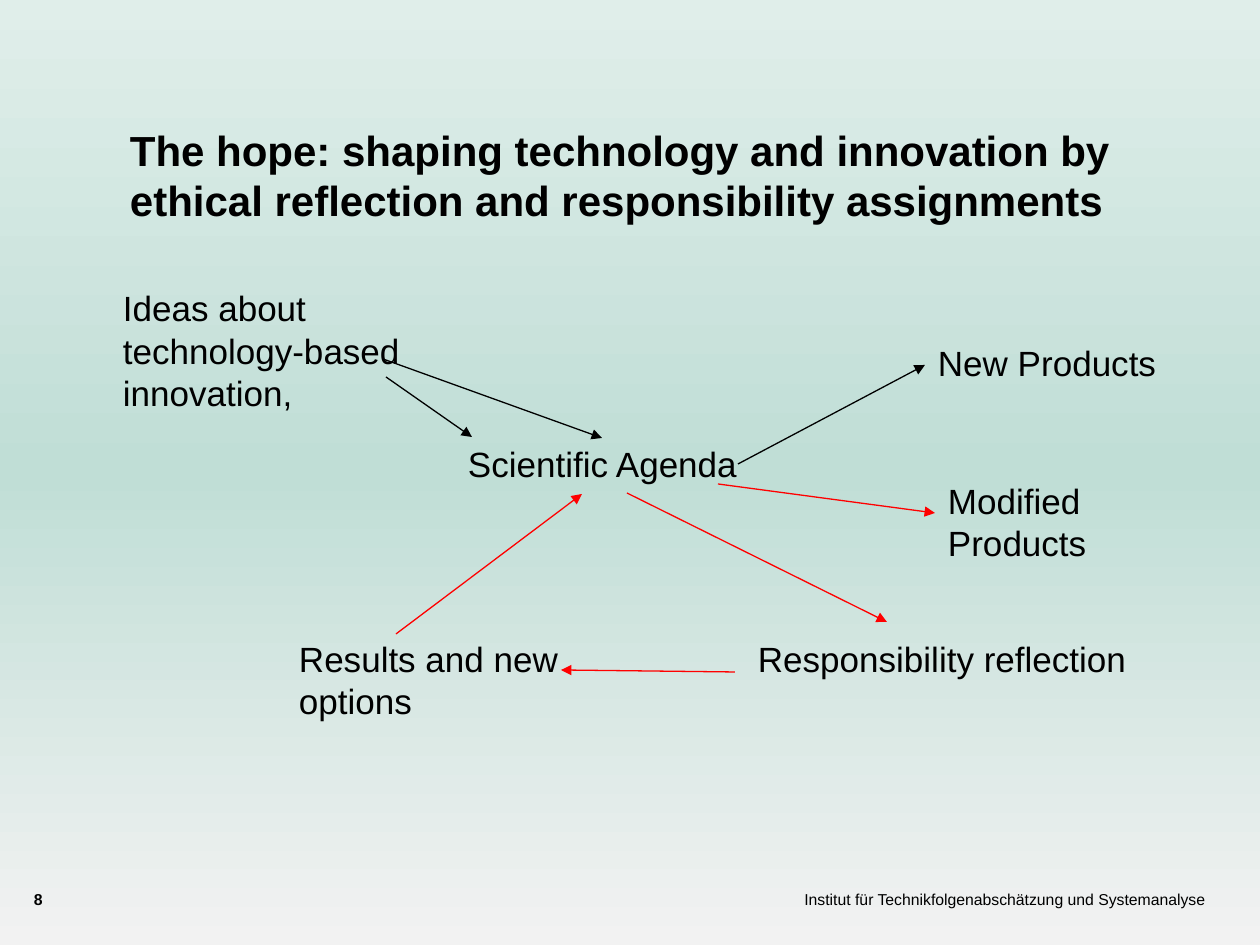
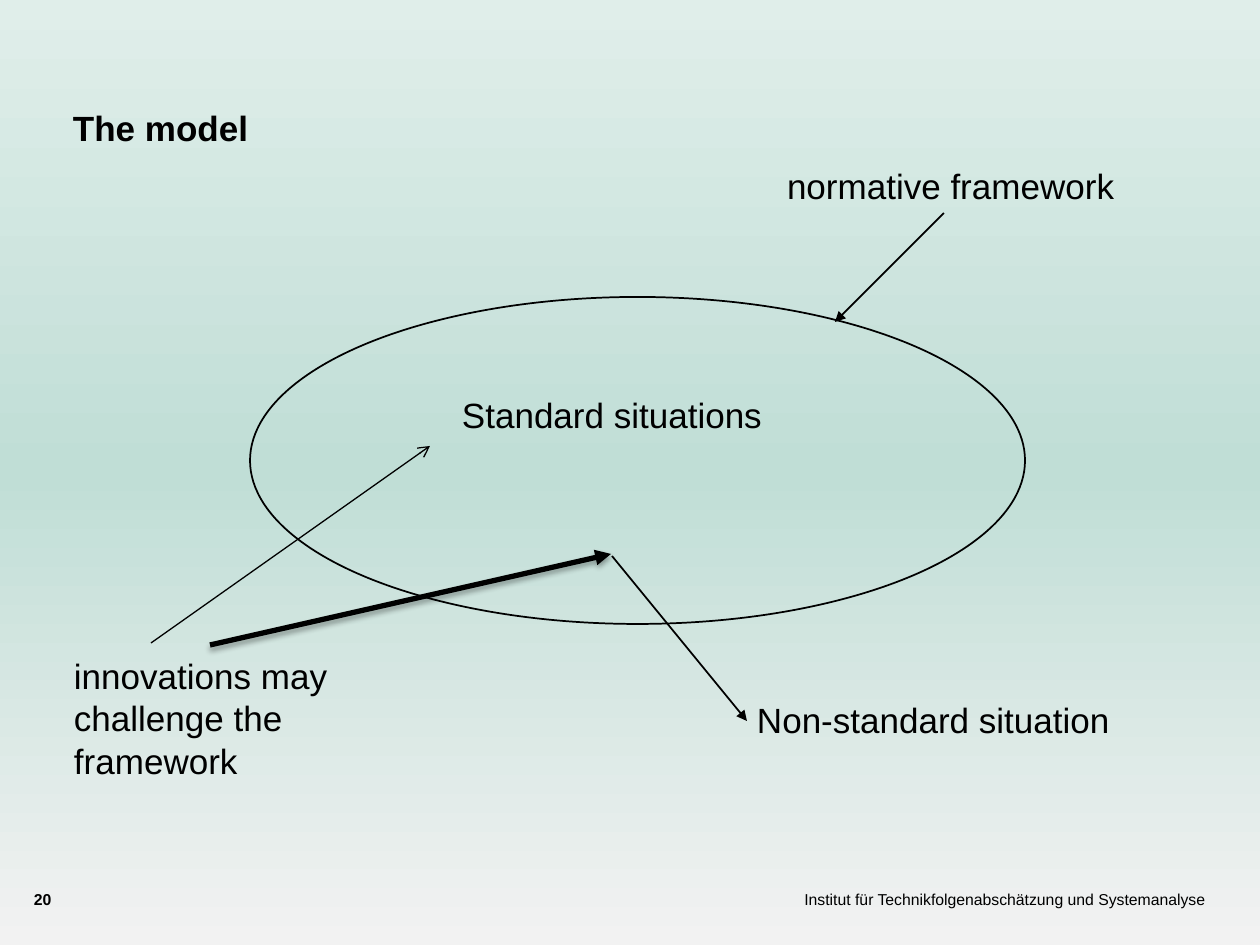
from typing import NamedTuple

from lxml import etree
from pptx import Presentation
from pptx import util as u
from pptx.dml.color import RGBColor
from pptx.enum import shapes, text
from pptx.oxml.ns import qn

PX = u.Inches(1) / 126
FONT = "Arial"
COLORS = {
    "ink": "000000",
    "feedback": "FF0000",
    "bottom": "F2F2F2",
    "middle": "C0DED6",
    "top": "E0EEEA",
}
BACKGROUND_STOPS = ((0, "bottom"), (50, "middle"), (100, "top"))
INSTITUTE = "Institut für Technikfolgenabschätzung und Systemanalyse"
WIDE_INSET = (13, 6)
NARROW_INSET = (10, 5)


class Box(NamedTuple):
    x: int
    y: int
    w: int
    h: int


class Label(NamedTuple):
    text: str
    box: Box


class Title(NamedTuple):
    text: str
    box: Box
    size: int
    indent: int = 0


class Arrow(NamedTuple):
    start: tuple[int, int]
    end: tuple[int, int]
    color: str = "ink"
    width: float = 0.75
    head: str = "triangle"
    shadow: bool = False


class Page(NamedTuple):
    number: int
    title: Title
    inset: tuple[int, int]
    labels: list[Label]
    arrows: list[Arrow]
    ellipse: Box | None = None


PAGES = [
    Page(
        8,
        Title(
            "The hope: shaping technology and innovation by ethical reflection "
            "and responsibility assignments",
            Box(69, 118, 1081, 583), 24, 48,
        ),
        WIDE_INSET,
        [
            Label("Ideas about technology-based innovation,", Box(110, 281, 393, 140)),
            Label("Scientific Agenda", Box(455, 436, 368, 54)),
            Label("Responsibility reflection", Box(745, 631, 454, 55)),
            Label("Results and new options", Box(286, 631, 296, 97)),
            Label("New Products", Box(925, 335, 300, 54)),
            Label("Modified Products", Box(935, 473, 286, 97)),
        ],
        [
            Arrow((386, 377), (472, 437)),
            Arrow((383, 359), (602, 438)),
            Arrow((738, 464), (925, 365)),
            Arrow((735, 672), (561, 670), "feedback"),
            Arrow((627, 493), (887, 622), "feedback"),
            Arrow((396, 634), (582, 494), "feedback"),
            Arrow((718, 484), (935, 513), "feedback"),
        ],
    ),
    Page(
        20,
        Title("The model", Box(63, 101, 1134, 786), 20),
        NARROW_INSET,
        [
            Label("Standard situations", Box(452, 388, 428, 53)),
            Label("innovations may challenge the framework", Box(64, 650, 355, 137)),
            Label("normative framework", Box(777, 160, 408, 53)),
            Label("Non-standard situation", Box(747, 694, 440, 53)),
        ],
        [
            Arrow((944, 213), (835, 322), width=1),
            Arrow((210, 645), (611, 554), width=3, shadow=True),
            Arrow((612, 556), (747, 721), width=1),
            Arrow((151, 643), (430, 446), head="arrow"),
        ],
        Box(250, 297, 775, 327),
    ),
]


def emu(*lengths: int) -> list[int]:
    return [round(n * PX) for n in lengths]


def rgb(name: str) -> RGBColor:
    return RGBColor.from_string(COLORS[name])


def add_color(parent, name: str):
    return etree.SubElement(parent, qn("a:srgbClr"), val=COLORS[name])


def set_background(master) -> None:
    master.background.fill.gradient()
    grad = master._element.find(".//" + qn("a:gradFill"))
    stops = grad.find(qn("a:gsLst"))
    for gs in list(stops):
        stops.remove(gs)
    for pos, name in BACKGROUND_STOPS:
        add_color(etree.SubElement(stops, qn("a:gs"), pos=str(pos * 1000)), name)
    grad.find(qn("a:lin")).set("ang", str(270 * 60000))


def add_text(s, content: str, box: Box, *, size: int = 20, bold: bool = False,
             inset: tuple[int, int] = (0, 0), indent: int = 0,
             align=text.PP_ALIGN.LEFT) -> None:
    tf = s.shapes.add_textbox(*emu(*box)).text_frame
    tf.word_wrap = True
    tf.margin_left = tf.margin_right = emu(inset[0])[0]
    tf.margin_top = tf.margin_bottom = emu(inset[1])[0]
    p = tf.paragraphs[0]
    p.alignment = align
    if indent:
        p._p.get_or_add_pPr().set("marL", str(emu(indent)[0]))
    r = p.add_run()
    r.text = content
    r.font.name, r.font.size, r.font.bold = FONT, u.Pt(size), bold
    r.font.color.rgb = rgb("ink")


def add_arrow(s, arrow: Arrow) -> None:
    sp = s.shapes.add_connector(
        shapes.MSO_CONNECTOR.STRAIGHT, *emu(*arrow.start, *arrow.end))
    sp.line.color.rgb = rgb(arrow.color)
    sp.line.width = u.Pt(arrow.width)
    etree.SubElement(sp.line._get_or_add_ln(), qn("a:tailEnd"), type=arrow.head)
    effects = etree.SubElement(sp._element.spPr, qn("a:effectLst"))
    if arrow.shadow:
        shadow = etree.SubElement(
            effects, qn("a:outerShdw"), blurRad="40000", dist="23000",
            dir=str(90 * 60000), rotWithShape="0")
        etree.SubElement(add_color(shadow, "ink"), qn("a:alpha"), val="35000")


def add_ellipse(s, box: Box) -> None:
    sp = s.shapes.add_shape(shapes.MSO_SHAPE.OVAL, *emu(*box))
    sp.shadow.inherit = False
    sp.fill.background()
    sp.line.color.rgb = rgb("ink")
    sp.line.width = u.Pt(1)


def add_page(prs, page: Page) -> None:
    s = prs.slides.add_slide(prs.slide_layouts[6])
    add_text(s, INSTITUTE, Box(748, 890, 457, 49), size=9, align=text.PP_ALIGN.RIGHT)
    add_text(s, str(page.number), Box(34, 890, 45, 30), size=9, bold=True)
    title = page.title
    add_text(s, title.text, title.box, size=title.size, bold=True,
             inset=page.inset, indent=title.indent)
    if page.ellipse:
        add_ellipse(s, page.ellipse)
    for label in page.labels:
        add_text(s, label.text, label.box, inset=page.inset)
    for arrow in page.arrows:
        add_arrow(s, arrow)


def main() -> None:
    prs = Presentation()
    prs.slide_width, prs.slide_height = emu(1260, 945)
    set_background(prs.slide_master)
    for page in PAGES:
        add_page(prs, page)
    prs.save("out.pptx")


if __name__ == "__main__":
    main()
